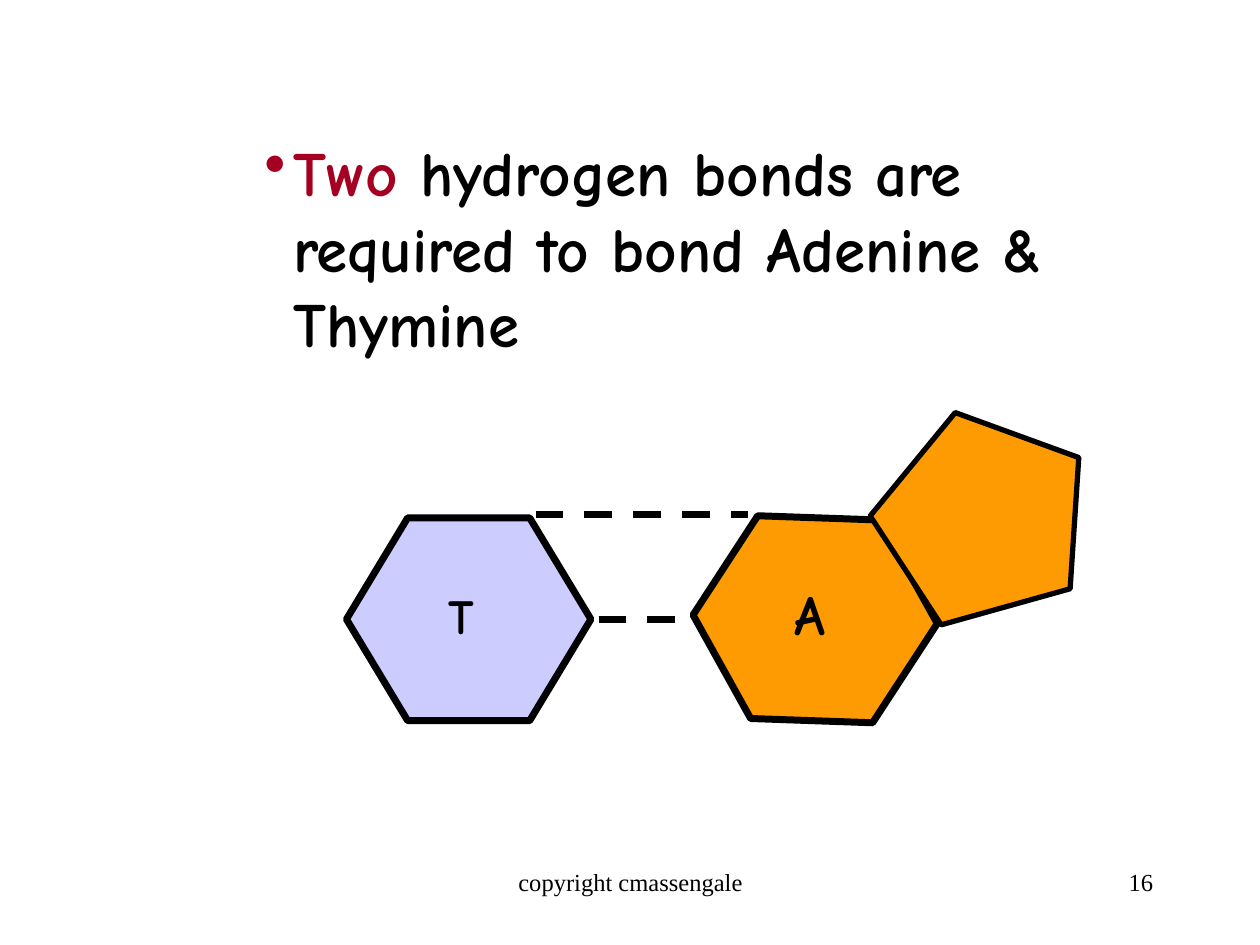
from lxml import etree
from pptx import Presentation
from pptx.dml.color import RGBColor
from pptx.enum.dml import MSO_LINE
from pptx.enum.shapes import MSO_CONNECTOR, MSO_SHAPE
from pptx.enum.text import MSO_ANCHOR, PP_ALIGN
from pptx.oxml.ns import qn
from pptx.util import Inches, Pt

BLACK = RGBColor(0x00, 0x00, 0x00)
RED = RGBColor(0xA5, 0x00, 0x21)
ORANGE = RGBColor(0xFE, 0x9B, 0x03)
LAVENDER = RGBColor(0xCC, 0xCC, 0xFF)
COMIC = "Comic Neue"
TIMES = "Times New Roman"


def style_span(span, size, name, color=BLACK, bold=False):
    span.font.size = Pt(size)
    span.font.name = name
    span.font.bold = bold
    span.font.color.rgb = color


def add_text(page, box, text, size, name, align=PP_ALIGN.LEFT, bold=False, wrap=True):
    label = page.shapes.add_textbox(*map(Inches, box))
    label.text_frame.word_wrap = wrap
    para = label.text_frame.paragraphs[0]
    para.text = text
    para.alignment = align
    style_span(para.runs[0], size, name, bold=bold)
    return label


def add_ring(page, kind, box, fill, line_width, rotation=0):
    ring = page.shapes.add_shape(kind, *map(Inches, box))
    ring.shadow.inherit = False
    ring.fill.solid()
    ring.fill.fore_color.rgb = fill
    ring.line.color.rgb = BLACK
    ring.line.width = Pt(line_width)
    ring.rotation = rotation
    if kind == MSO_SHAPE.HEXAGON:
        ring.adjustments[0] = 0.302
        ring.adjustments[1] = 1.155


def add_bond(page, left, right, y):
    bond = page.shapes.add_connector(
        MSO_CONNECTOR.STRAIGHT, Inches(left), Inches(y), Inches(right), Inches(y))
    bond.line.color.rgb = BLACK
    bond.line.width = Pt(4)
    bond.line.dash_style = MSO_LINE.DASH
    etree.SubElement(bond._element.spPr, qn("a:effectLst"))


def add_statement(page, box):
    statement = page.shapes.add_textbox(*map(Inches, box))
    frame = statement.text_frame
    frame.word_wrap = True
    frame.vertical_anchor = MSO_ANCHOR.MIDDLE
    para = frame.paragraphs[0]
    # Hanging bullet, coloured like the first word
    properties = para._p.get_or_add_pPr()
    properties.set("marL", str(Inches(0.23)))
    properties.set("indent", str(-Inches(0.23)))
    etree.SubElement(properties, qn("a:buChar")).set("char", "•")
    for text, color in (
        ("Two", RED),
        (" hydrogen bonds are required to bond Adenine & Thymine", BLACK),
    ):
        span = para.add_run()
        span.text = text
        style_span(span, 36, COMIC, color, bold=True)


def add_base_pair(page, left, top):
    ring_width, ring_height = 1.94, 1.61
    ring_top = top + 0.85
    adenine_left = left + 2.75

    # Six-sided rings
    add_ring(page, MSO_SHAPE.HEXAGON,
             (adenine_left, ring_top, ring_width, ring_height), ORANGE, 4, 2)
    add_ring(page, MSO_SHAPE.HEXAGON,
             (left, ring_top, ring_width, ring_height), LAVENDER, 4)

    # Base letters
    add_text(page, (left + 0.71, top + 1.34, 0.47, 0.56), "T", 28, COMIC,
             bold=True, wrap=False)
    letter = add_text(page, (left + 3.46, top + 1.29, 0.52, 0.63), "A", 32, COMIC,
                      bold=True, wrap=False)
    letter.fill.solid()
    letter.fill.fore_color.rgb = ORANGE

    # Two hydrogen bonds
    add_bond(page, left + 2, left + 2.78, top + 1.66)
    add_bond(page, left + 1.5, left + 3.19, top + 0.82)

    # Five-sided ring of adenine
    add_ring(page, MSO_SHAPE.REGULAR_PENTAGON,
             (left + 4.29, top, 1.67, 1.64), ORANGE, 3, 56.9)


def add_footer(page, top):
    add_text(page, (3.42, top, 3.17, 0.5), "copyright cmassengale", 14, TIMES,
             PP_ALIGN.CENTER)
    add_text(page, (7.17, top, 2.08, 0.5), "16", 14, TIMES, PP_ALIGN.RIGHT)


def main():
    deck = Presentation()
    deck.slide_width, deck.slide_height = Inches(10), Inches(7.5)
    page = deck.slides.add_slide(deck.slide_layouts[6])
    add_base_pair(page, 2.75, 3.26)
    add_statement(page, (2, 0.67, 7.25, 2.58))
    add_footer(page, 6.83)
    deck.save("out.pptx")


if __name__ == "__main__":
    main()
